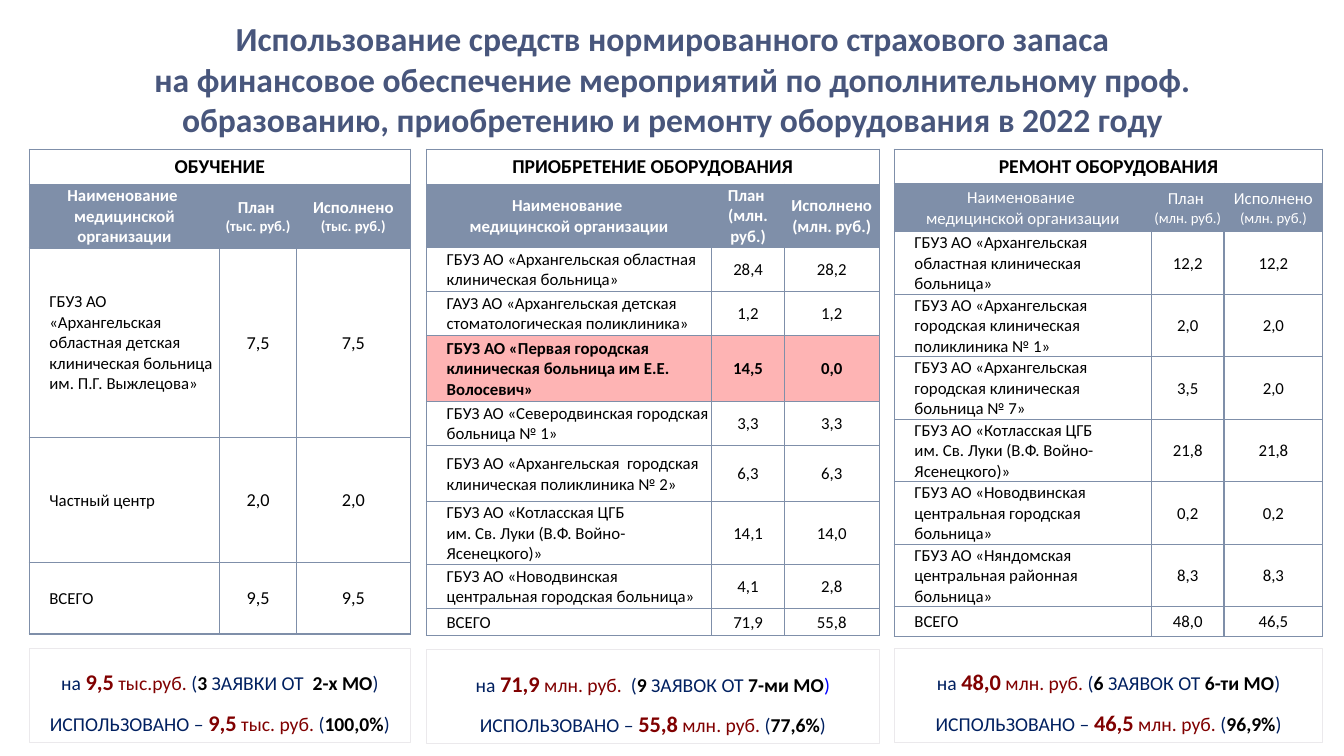
"""Build the slide on the 2022 use of the insurance reserve for training and equipment."""
from pptx import Presentation
from pptx.dml.color import RGBColor
from pptx.enum import shapes, text as text_enum
from pptx.oxml import parse_xml, ns
from pptx.util import Inches, Pt

SLATE, NAVY, MAROON, BLACK, WHITE = "7F8FA9", "002060", "800000", "000000", "FFFFFF"
PINK, TITLE_COLOUR, BOX_LINE = "FEB4B4", "48567C", "EBE9EC"
TITLE = [
    "Использование средств нормированного страхового запаса",
    "на финансовое обеспечение мероприятий по дополнительному проф. "
    "образованию, приобретению и ремонту оборудования в 2022 году",
]
NAME_HEADER = "Наименование \nмедицинской организации"
SECTIONS = [
    dict(
        heading="ОБУЧЕНИЕ", unit="(тыс. руб.)", unit_size=10.5, header_bold=True,
        left=0.29, columns=[1.89, 0.76, 1.13], rows=[0.35, 0.63, 1.88, 1.24, 0.71],
        value_size=13, highlight=None,
        data=[
            ("ГБУЗ АО «Архангельская областная детская клиническая больница \vим. П.Г. Выжлецова»", "7,5", "7,5"),
            ("Частный центр", "2,0", "2,0"),
            ("ВСЕГО", "9,5", "9,5"),
        ],
        box_top=6.43, closing=NAVY,
        summary=("9,5", " тыс.руб. ", "3", " ЗАЯВКИ ОТ  ", "2-х МО", "9,5", " тыс. руб. ", "100,0%"),
    ),
    dict(
        heading="ПРИОБРЕТЕНИЕ ОБОРУДОВАНИЯ", unit="(млн. руб.)", unit_size=12, header_bold=True,
        left=4.23, columns=[2.83, 0.72, 0.94],
        rows=[0.35, 0.56, 0.44, 0.44, 0.65, 0.44, 0.56, 0.56, 0.44, 0.27],
        value_size=12, highlight=2,
        data=[
            ("ГБУЗ АО «Архангельская областная клиническая больница»", "28,4", "28,2"),
            ("ГАУЗ АО «Архангельская детская стоматологическая поликлиника»", "1,2", "1,2"),
            ("ГБУЗ АО «Первая городская клиническая больница им Е.Е. Волосевич»", "14,5", "0,0"),
            ("ГБУЗ АО «Северодвинская городская больница № 1»", "3,3", "3,3"),
            ("ГБУЗ АО «Архангельская  городская клиническая поликлиника № 2»", "6,3", "6,3"),
            ("ГБУЗ АО «Котласская ЦГБ \vим. Св. Луки (В.Ф. Войно-Ясенецкого)»", "14,1", "14,0"),
            ("ГБУЗ АО «Новодвинская центральная городская больница»", "4,1", "2,8"),
            ("ВСЕГО", "71,9", "55,8"),
        ],
        box_top=6.44, closing="0000FF",
        summary=("71,9", " млн. руб.  ", "9", " ЗАЯВОК ОТ ", "7-ми МО", "55,8", " млн. руб. ", "77,6%"),
    ),
    dict(
        heading="РЕМОНТ ОБОРУДОВАНИЯ", unit="(млн. руб.)", unit_size=10.5, header_bold=False,
        left=8.87, columns=[2.55, 0.72, 0.98], rows=[0.34, 0.48] + [0.61] * 6 + [0.3],
        value_size=12, highlight=None,
        data=[
            ("ГБУЗ АО «Архангельская областная клиническая больница»", "12,2", "12,2"),
            ("ГБУЗ АО «Архангельская  городская клиническая поликлиника № 1»", "2,0", "2,0"),
            ("ГБУЗ АО «Архангельская городская клиническая больница № 7»", "3,5", "2,0"),
            ("ГБУЗ АО «Котласская ЦГБ \vим. Св. Луки (В.Ф. Войно-Ясенецкого)»", "21,8", "21,8"),
            ("ГБУЗ АО «Новодвинская центральная городская больница»", "0,2", "0,2"),
            ("ГБУЗ АО «Няндомская центральная районная больница»", "8,3", "8,3"),
            ("ВСЕГО", "48,0", "46,5"),
        ],
        box_top=6.43, closing=NAVY,
        summary=("48,0", " млн. руб. ", "6", " ЗАЯВОК ОТ ", "6-ти МО", "46,5", " млн. руб. ", "96,9%"),
    ),
]


def colour(value):
    return RGBColor.from_string(value)


def write(paragraph, text, size=12, fill=BLACK, bold=False, align="CENTER", indent=0):
    paragraph.alignment = getattr(text_enum.PP_ALIGN, align)
    if indent:
        properties = paragraph._p.get_or_add_pPr()
        properties.set("marL", str(Inches(indent)))
        properties.set("indent", "0")
    for index, part in enumerate(text.split("\v")):
        if index:
            paragraph.add_line_break()
        run = paragraph.add_run()
        run.text = part
        run.font.name = "Calibri"
        run.font.size = Pt(size)
        run.font.bold = bold
        run.font.color.rgb = colour(fill)


def paragraph_at(frame, index):
    return frame.add_paragraph() if index else frame.paragraphs[0]


def format_cell(cell, fill, side=0.01, top=0.01, bottom=0):
    cell.vertical_anchor = text_enum.MSO_ANCHOR.MIDDLE
    cell.margin_left = cell.margin_right = Inches(side)
    cell.margin_top, cell.margin_bottom = Inches(top), Inches(bottom)
    for edge in "LRTB":
        cell._tc.get_or_add_tcPr().append(parse_xml(
            f'<a:ln{edge} {ns.nsdecls("a")} w="{Pt(1)}"><a:solidFill>'
            f'<a:srgbClr val="{SLATE}"/></a:solidFill></a:ln{edge}>'))
    cell.fill.solid()
    cell.fill.fore_color.rgb = colour(fill)


def add_section_table(slide, section):
    columns, rows = section["columns"], section["rows"]
    table = slide.shapes.add_table(
        len(rows), len(columns), Inches(section["left"]), Inches(1.48),
        Inches(sum(columns)), Inches(sum(rows))).table
    table.first_row = table.horz_banding = False
    for column, width in zip(table.columns, columns):
        column.width = Inches(width)
    for row, height in zip(table.rows, rows):
        row.height = Inches(height)

    for cell in table.rows[0].cells:
        format_cell(cell, WHITE, 0.13, 0.05, 0.05)
    table.cell(0, 0).merge(table.cell(0, len(columns) - 1))
    write(table.cell(0, 0).text_frame.paragraphs[0], section["heading"], size=14, bold=True)

    headers = [NAME_HEADER, "План \n" + section["unit"], "Исполнено\n" + section["unit"]]
    for cell, header in zip(table.rows[1].cells, headers):
        format_cell(cell, SLATE)
        for index, line in enumerate(header.split("\n")):
            size = section["unit_size"] if line == section["unit"] else 12
            write(paragraph_at(cell.text_frame, index), line, size=size,
                  fill=WHITE, bold=section["header_bold"])

    for row_index, record in enumerate(section["data"]):
        marked = row_index == section["highlight"]
        for column_index, value in enumerate(record):
            cell = table.cell(row_index + 2, column_index)
            format_cell(cell, PINK if marked else WHITE)
            style = dict(size=section["value_size"]) if column_index else dict(align="LEFT", indent=0.19)
            write(cell.text_frame.paragraphs[0], value, bold=marked, **style)


def add_summary(slide, section):
    amount, unit, count, requests, clients, used, used_unit, share = section["summary"]
    navy, black = dict(size=14, fill=NAVY), dict(size=14, bold=True)
    total, money = dict(size=16, fill=MAROON, bold=True), dict(size=14, fill=MAROON)
    closing = dict(size=14, fill=section["closing"])
    lines = [
        [("на ", navy), (amount, total), (unit, money), ("(", navy), (count, black),
         (requests, navy), (clients, black), (")", closing)],
        [("ИСПОЛЬЗОВАНО – ", navy), (used, total), (used_unit, money), ("(", navy),
         (share, black), (")", navy)],
    ]
    box = slide.shapes.add_shape(
        shapes.MSO_SHAPE.ROUNDED_RECTANGLE, Inches(section["left"]), Inches(section["box_top"]),
        Inches(sum(section["columns"])), Inches(0.94))
    box.adjustments[0] = 0
    box.shadow.inherit = False
    box.fill.solid()
    box.fill.fore_color.rgb = colour(WHITE)
    box.line.color.rgb = colour(BOX_LINE)
    box.line.width = Pt(0.75)
    box.text_frame.word_wrap = True
    box.text_frame.vertical_anchor = text_enum.MSO_ANCHOR.MIDDLE
    for index, line in enumerate(lines):
        paragraph = paragraph_at(box.text_frame, index)
        paragraph.line_spacing = 1.5
        for text, style in line:
            write(paragraph, text, **style)


def main():
    presentation = Presentation()
    presentation.slide_width, presentation.slide_height = Inches(13.33), Inches(7.5)
    slide = presentation.slides.add_slide(presentation.slide_layouts[5])
    title = slide.shapes.title
    title.left, title.top, title.width, title.height = map(Inches, (0.45, 0.13, 12.44, 1.32))
    title.text_frame.auto_size = text_enum.MSO_AUTO_SIZE.NONE
    title.text_frame.vertical_anchor = text_enum.MSO_ANCHOR.TOP
    for index, line in enumerate(TITLE):
        write(paragraph_at(title.text_frame, index), line, size=24, fill=TITLE_COLOUR, bold=True)
    for section in SECTIONS:
        add_section_table(slide, section)
        add_summary(slide, section)
    presentation.save("out.pptx")


if __name__ == "__main__":
    main()
